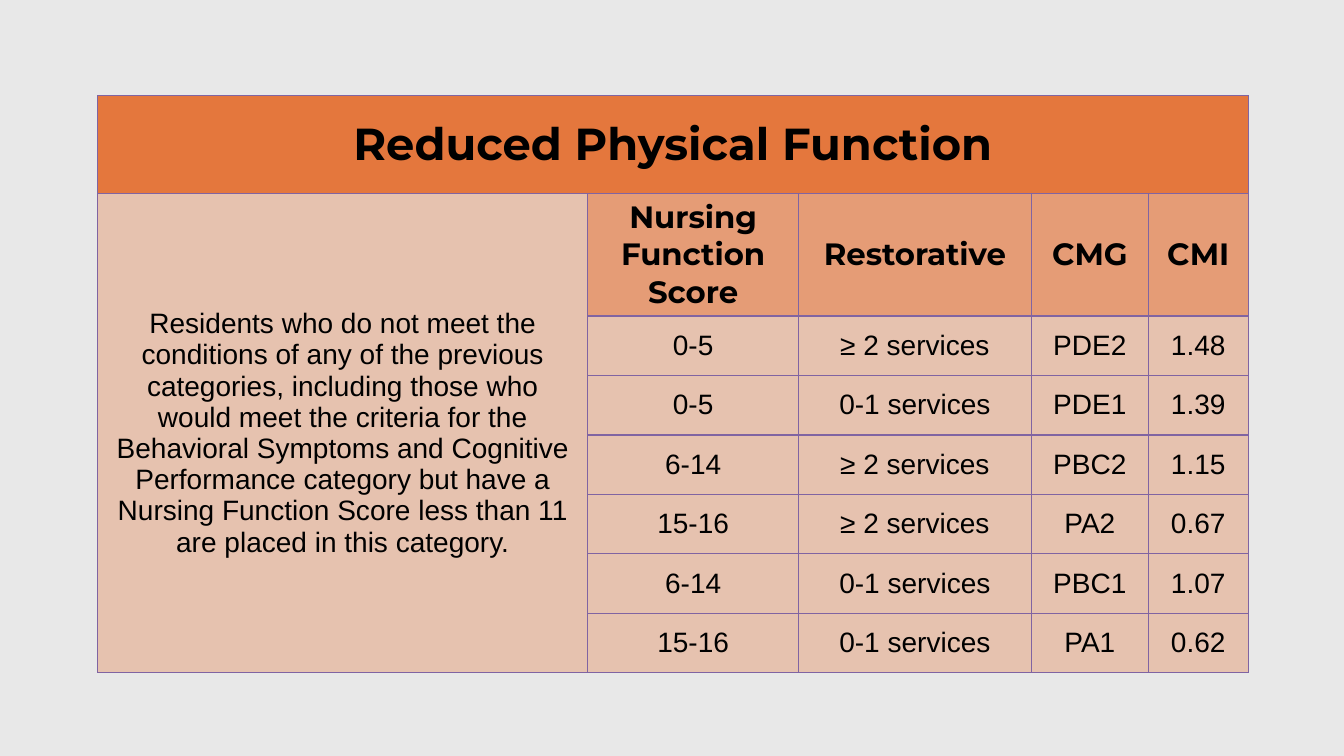
"""Build the Reduced Physical Function case-mix table slide."""
from dataclasses import dataclass

from lxml import etree
from pptx import Presentation
from pptx import util as u
from pptx.dml.color import RGBColor
from pptx.enum import text
from pptx.oxml.ns import qn

TITLE = "Reduced Physical Function"
CRITERIA = (
    "Residents who do not meet the conditions of any of the previous categories, "
    "including those who would meet the criteria for the Behavioral Symptoms and "
    "Cognitive Performance category but have a Nursing Function Score less than 11 "
    "are placed in this category."
)
HEADINGS = ("Nursing\nFunction Score", "Restorative", "CMG", "CMI")
GROUPS = [
    ("0-5", "≥ 2 services", "PDE2", "1.48"),
    ("0-5", "0-1 services", "PDE1", "1.39"),
    ("6-14", "≥ 2 services", "PBC2", "1.15"),
    ("15-16", "≥ 2 services", "PA2", "0.67"),
    ("6-14", "0-1 services", "PBC1", "1.07"),
    ("15-16", "0-1 services", "PA1", "0.62"),
]
SLIDE_SIZE = (13.33, 7.5)
TABLE_CORNER = (0.97, 0.95)
COLUMN_WIDTHS = (4.86, 2.09, 2.31, 1.16, 0.99)
ROW_HEIGHTS = (0.97, 1.1) + (0.59,) * len(GROUPS)


@dataclass(frozen=True)
class Level:
    size: int
    font: str
    bold: bool
    opacity: int


@dataclass(frozen=True)
class Theme:
    backdrop: str = "E8E8E8"
    accent: str = "E35205"
    ink: str = "000000"
    border: str = "8064A2"
    border_width: int = 1
    title: Level = Level(32, "Montserrat", True, 75)
    heading: Level = Level(22, "Montserrat", True, 50)
    body: Level = Level(20, "Arial", False, 25)


THEME = Theme()


def paint(cell, level):
    cell.fill.solid()
    cell.fill.fore_color.rgb = RGBColor.from_string(THEME.accent)
    properties = cell._tc.tcPr
    tint = properties.find(".//" + qn("a:srgbClr"))
    etree.SubElement(tint, qn("a:alpha"), val=str(level.opacity * 1000))
    for position, side in enumerate(("a:lnL", "a:lnR", "a:lnT", "a:lnB")):
        edge = etree.Element(qn(side), w=str(u.Pt(THEME.border_width)))
        stroke = etree.SubElement(edge, qn("a:solidFill"))
        etree.SubElement(stroke, qn("a:srgbClr"), val=THEME.border)
        properties.insert(position, edge)


def write(cell, words, level):
    cell.text = words
    cell.vertical_anchor = text.MSO_ANCHOR.MIDDLE
    for paragraph in cell.text_frame.paragraphs:
        paragraph.alignment = text.PP_ALIGN.CENTER
        paragraph.font.size = u.Pt(level.size)
        paragraph.font.name = level.font
        paragraph.font.bold = level.bold
        paragraph.font.color.rgb = RGBColor.from_string(THEME.ink)


def main():
    deck = Presentation()
    deck.slide_width, deck.slide_height = map(u.Inches, SLIDE_SIZE)
    slide = deck.slides.add_slide(deck.slide_layouts[6])
    slide.background.fill.solid()
    slide.background.fill.fore_color.rgb = RGBColor.from_string(THEME.backdrop)

    extent = (*TABLE_CORNER, sum(COLUMN_WIDTHS), sum(ROW_HEIGHTS))
    table = slide.shapes.add_table(
        len(ROW_HEIGHTS), len(COLUMN_WIDTHS), *map(u.Inches, extent)
    ).table
    table.first_row = table.horz_banding = False
    for column, width in zip(table.columns, COLUMN_WIDTHS):
        column.width = u.Inches(width)
    for row, height in zip(table.rows, ROW_HEIGHTS):
        row.height = u.Inches(height)

    last_row, last_column = len(ROW_HEIGHTS) - 1, len(COLUMN_WIDTHS) - 1
    table.cell(0, 0).merge(table.cell(0, last_column))
    table.cell(1, 0).merge(table.cell(last_row, 0))

    lines = [(TITLE, "", "", "", ""), (CRITERIA, *HEADINGS)]
    lines += [("", *group) for group in GROUPS]
    for r, line in enumerate(lines):
        for c, words in enumerate(line):
            level = THEME.title if r == 0 else THEME.heading if r == 1 and c else THEME.body
            cell = table.cell(r, c)
            paint(cell, level)
            if words:
                write(cell, words, level)

    deck.save("out.pptx")


if __name__ == "__main__":
    main()
